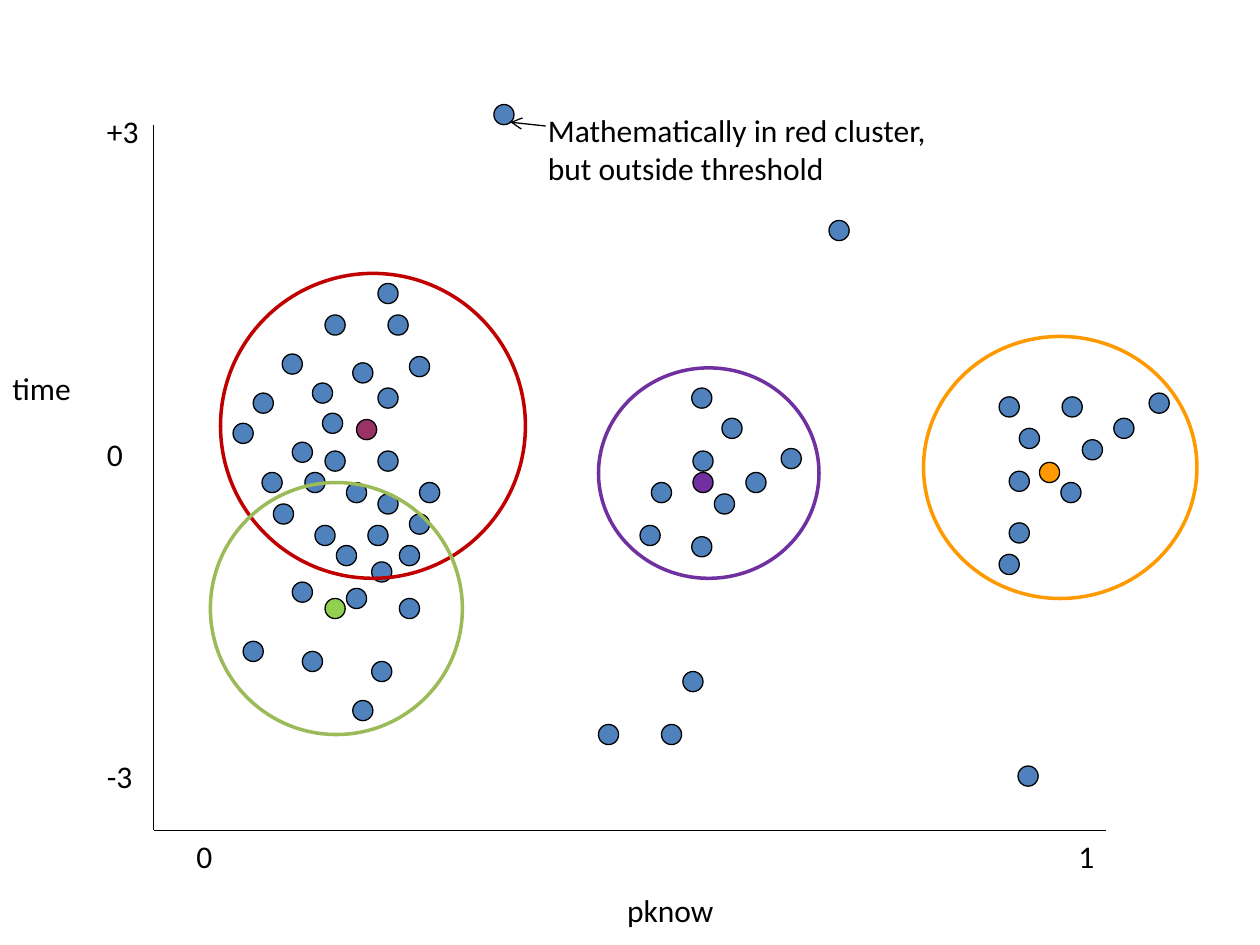
"""Build a scatter slide of time against pknow with four clusters and their outliers."""
from dataclasses import dataclass

from lxml.etree import SubElement
from pptx import Presentation
from pptx.dml.color import RGBColor
from pptx.enum.shapes import MSO_CONNECTOR, MSO_SHAPE
from pptx.enum.text import PP_ALIGN
from pptx.oxml.ns import qn
from pptx.util import Inches, Pt


@dataclass(frozen=True)
class Theme:
    font: str = "Calibri"
    text_size: float = 18
    ink: str = "000000"
    point: str = "4F81BD"
    thin: float = 0.75
    thick: float = 2
    red: str = "C00000"
    red_center: str = "993366"
    green: str = "9BBB59"
    green_center: str = "92D050"
    purple: str = "7030A0"
    orange: str = "FF9900"


theme = Theme()
DOT = 0.16

presentation = Presentation()
presentation.slide_width = Inches(10)
presentation.slide_height = Inches(7.5)
slide = presentation.slides.add_slide(presentation.slide_layouts[6])


def add_text(text, *, left, top, width, height=0.4, align=PP_ALIGN.LEFT,
             size=theme.text_size, color=theme.ink):
    label = slide.shapes.add_textbox(*map(Inches, (left, top, width, height)))
    label.text_frame.word_wrap = True
    paragraph = label.text_frame.paragraphs[0]
    paragraph.text = text
    paragraph.alignment = align
    for run in paragraph.runs:
        run.font.name = theme.font
        run.font.size = Pt(size)
        run.font.color.rgb = RGBColor.from_string(color)


def add_circle(left, top, width=DOT, height=DOT, fill=None, line=theme.ink, weight=theme.thin):
    circle = slide.shapes.add_shape(MSO_SHAPE.OVAL, *map(Inches, (left, top, width, height)))
    circle.shadow.inherit = False
    if fill:
        circle.fill.solid()
        circle.fill.fore_color.rgb = RGBColor.from_string(fill)
    else:
        circle.fill.background()
    circle.line.color.rgb = RGBColor.from_string(line)
    circle.line.width = Pt(weight)


red_points = [
    (3.08, 2.5), (2.58, 2.5), (3.25, 2.83), (3, 2.25), (2.48, 3.04), (2.24, 2.81),
    (1.85, 3.36), (2.01, 3.12), (2.32, 3.51), (2.8, 2.88), (2.56, 3.28), (3, 3.08),
    (3, 3.58), (2.58, 3.58), (3.33, 3.83), (2.08, 3.75), (2.17, 4),
]
shared_points = [
    (2.42, 3.75), (2.75, 3.83), (3, 3.92), (3.25, 4.08), (2.92, 4.17), (2.5, 4.17),
    (3.17, 4.33), (2.67, 4.33), (2.95, 4.46),
]
green_points = [
    (2.75, 4.67), (3.17, 4.75), (2.32, 4.62), (2.8, 5.56), (2.95, 5.25), (1.93, 5.09),
    (2.4, 5.17),
]
purple_points = [
    (5.17, 3.83), (5.08, 4.17), (5.67, 3.92), (5.92, 3.75), (5.5, 3.58), (5.49, 4.26),
    (6.2, 3.56), (5.49, 3.08), (5.73, 3.32),
]
orange_points = [
    (7.93, 4.4), (7.93, 3.15), (8.09, 3.4), (8.01, 3.74), (8.59, 3.49), (8.01, 4.15),
    (8.84, 3.32), (8.43, 3.15), (8.42, 3.83), (9.12, 3.12),
]
outliers = [(4.75, 5.75), (5.25, 5.75), (5.42, 5.33), (8.08, 6.08), (6.58, 1.75), (3.92, 0.83)]
centers = [
    (2.83, 3.33, theme.red_center), (2.58, 4.75, theme.green_center),
    (8.25, 3.67, theme.orange), (5.5, 3.75, theme.purple),
]
boundaries = [
    (1.75, 2.17, 2.42, 2.42, theme.red), (1.67, 3.83, 2, 2, theme.green),
    (4.75, 2.92, 1.75, 1.67, theme.purple), (7.33, 2.67, 2.17, 2.08, theme.orange),
]

for left, top in red_points + shared_points + green_points + purple_points + orange_points:
    add_circle(left, top, fill=theme.point)
for left, top, color in centers:
    add_circle(left, top, fill=color)
for left, top, width, height, color in boundaries:
    add_circle(left, top, width, height, line=color, weight=theme.thick)
for left, top in outliers:
    add_circle(left, top, fill=theme.point)

for index, tick in enumerate(("+3", "0", "-3")):
    add_text(tick, left=0.75, top=0.84 + 2.56 * index, width=0.63)
for tick, left in (("0", 1.46), ("1", 8.46)):
    add_text(tick, left=left, top=6.59, width=0.4)
add_text("pknow", left=1.46, top=7.02, width=7.72, align=PP_ALIGN.CENTER)
add_text("time", left=0, top=2.88, width=0.83)
add_text("Mathematically in red cluster,\vbut outside threshold",
         left=4.25, top=0.83, width=4.08, height=0.71)

time_axis = (1.22, 0.99, 1.22, 6.59)
pknow_axis = (1.22, 6.59, 8.78, 6.59)
outlier_pointer = (4.33, 1, 4.05, 0.97)
for ends in (time_axis, pknow_axis, outlier_pointer):
    stroke = slide.shapes.add_connector(MSO_CONNECTOR.STRAIGHT, *map(Inches, ends))
    stroke.line.color.rgb = RGBColor.from_string(theme.ink)
    stroke.line.width = Pt(theme.thin)
    if ends == outlier_pointer:
        SubElement(stroke.line._get_or_add_ln(), qn("a:tailEnd"), type="arrow")
    SubElement(stroke._element.spPr, qn("a:effectLst"))

presentation.save("out.pptx")
